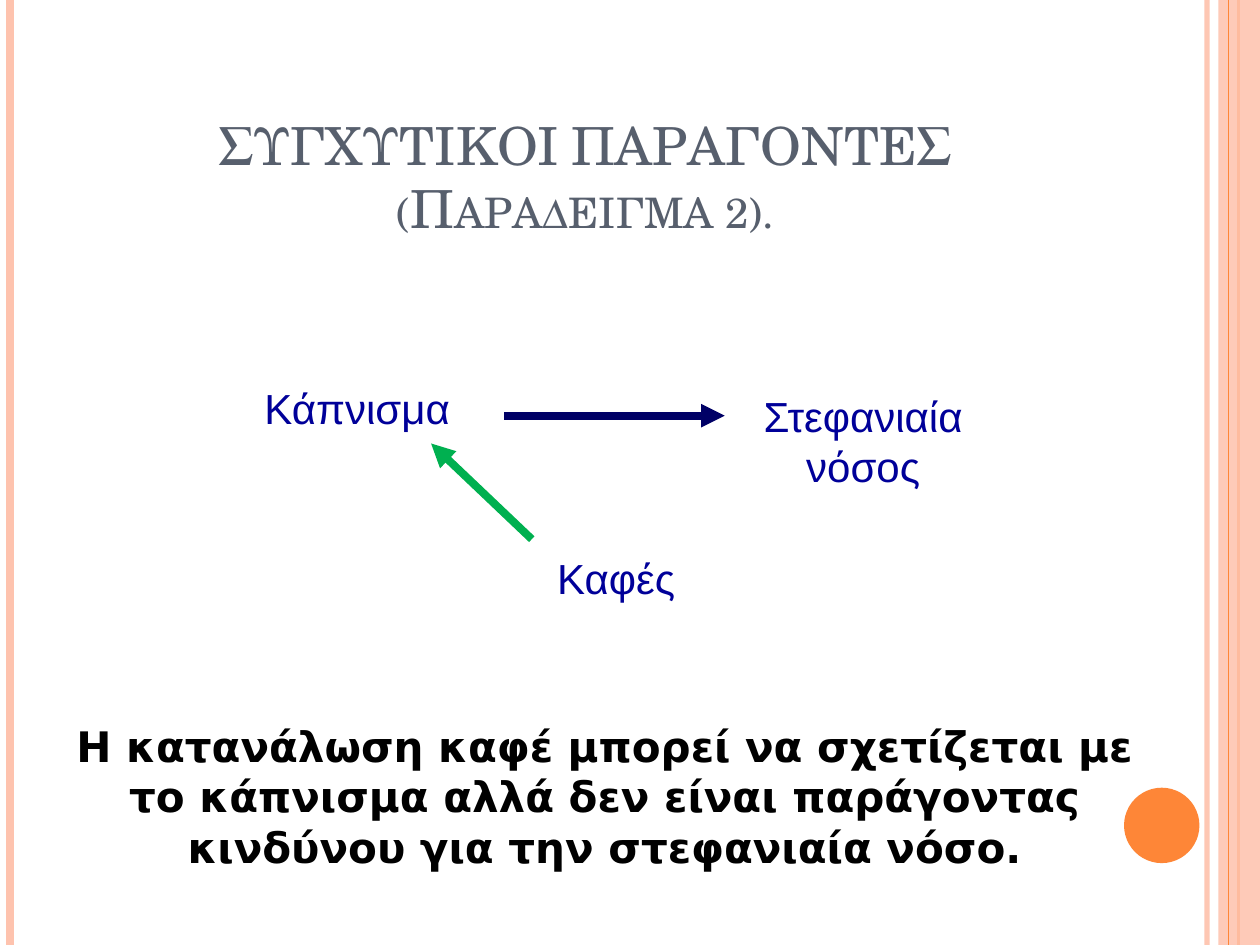
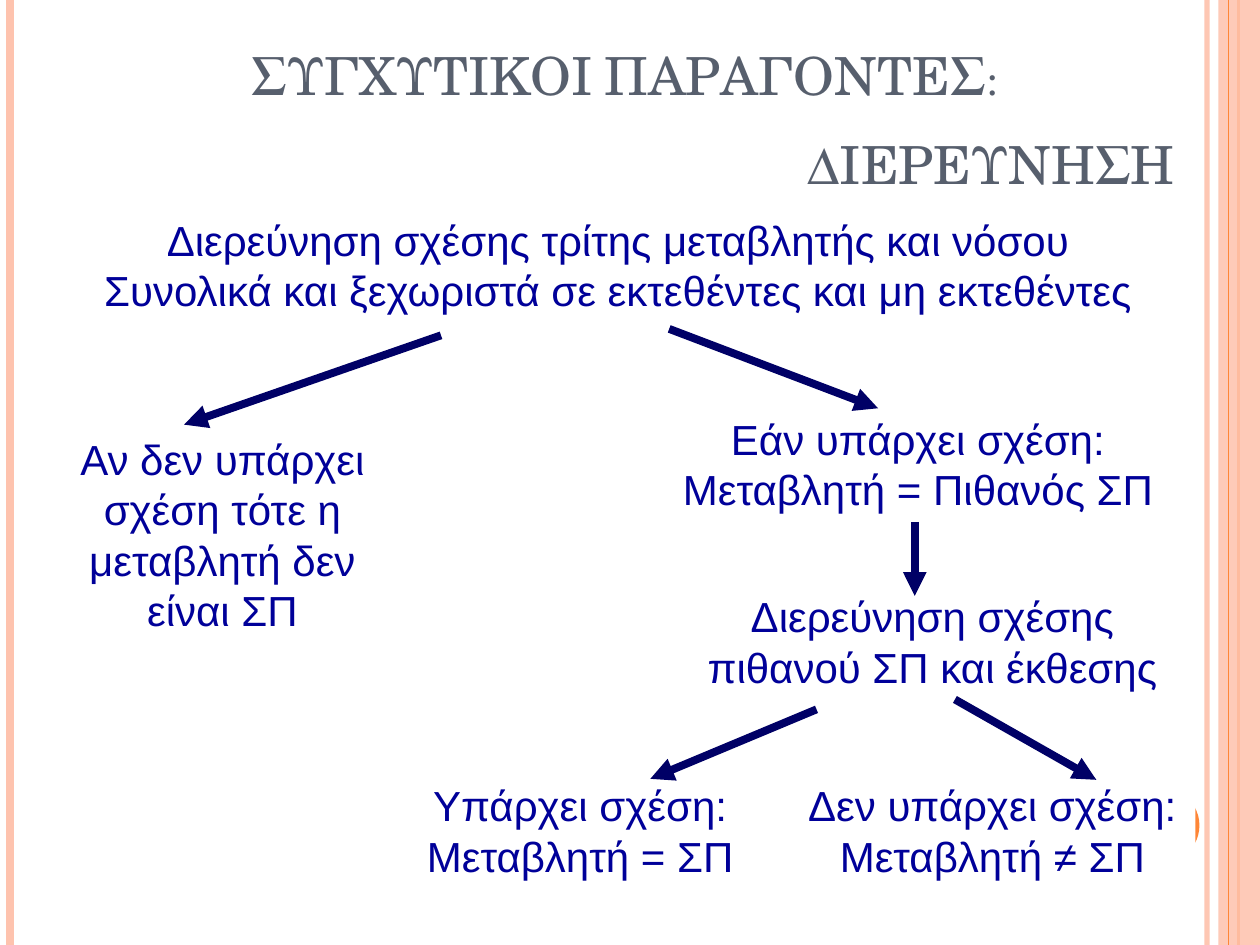
from typing import NamedTuple

from lxml.etree import SubElement
from pptx import Presentation
from pptx.dml.color import RGBColor
from pptx.enum.shapes import MSO_CONNECTOR, MSO_SHAPE
from pptx.enum.text import MSO_ANCHOR, MSO_AUTO_SIZE, PP_ALIGN
from pptx.oxml.ns import qn
from pptx.shapes.autoshape import Shape
from pptx.shapes.connector import Connector
from pptx.slide import Slide, SlideLayout
from pptx.text.text import TextFrame
from pptx.util import Cm, Pt

COLOURS = {
    "white": "FFFFFF",
    "black": "000000",
    "peach": "FEC3AE",
    "orange": "FE8637",
    "title": "575F6D",
    "label": "000099",
    "arrow": "000066",
    "green": "00B050",
}
SLIDE_WIDTH, SLIDE_HEIGHT = 25.4, 19.05
TITLE_ONLY = 5


class Box(NamedTuple):
    """Position and size in centimetres."""
    left: float
    top: float
    width: float
    height: float


class TextStyle(NamedTuple):
    font: str
    size: int
    colour: str
    bold: bool = False


class Label(NamedTuple):
    box: Box
    lines: list[str]


class Arrow(NamedTuple):
    start: tuple[float, float]
    end: tuple[float, float]
    colour: str = "arrow"


class Stripe(NamedTuple):
    x: float
    colour: str
    width: float
    opacity: int = 100


TITLE_STYLE = TextStyle("TeX Gyre Schola", 30, "title")
LABEL_STYLE = TextStyle("Arial", 24, "label")
STATEMENT_STYLE = TextStyle("DejaVu Sans", 24, "black", bold=True)

BACK_STRIPES = [
    Stripe(24.33, "peach", 3, 93),
    Stripe(0.2, "peach", 4.5),
    Stripe(24.97, "orange", 1.5),
]
FRONT_STRIPE = Stripe(24.77, "orange", 0.75)
BAND = Box(24.56, 0, 0.84, SLIDE_HEIGHT)
DISC = Box(22.66, 15.88, 1.52, 1.52)

EXAMPLE_LABELS = [
    Label(Box(11.1, 11.13, 2.64, 1.02), ["Καφές"]),
    Label(Box(15.29, 7.87, 4.22, 2.06), ["Στεφανιαία νόσος"]),
    Label(Box(4.7, 7.72, 5, 1.02), ["Κάπνισμα"]),
]
EXAMPLE_ARROWS = [
    Arrow((10.16, 8.38), (14.61, 8.38)),
    Arrow((10.72, 10.87), (8.69, 8.94), "green"),
]
STATEMENT = Label(Box(1.09, 14.4, 22.2, 3.33), [
    "Η κατανάλωση καφέ μπορεί να σχετίζεται με το κάπνισμα αλλά δεν είναι "
    "παράγοντας κινδύνου για την στεφανιαία νόσο."])

INVESTIGATION_PANEL = Box(0.71, 4.11, 23.39, 14.61)
INVESTIGATION_LABELS = [
    Label(Box(0.71, 4.32, 23.5, 2.06), [
        "Διερεύνηση σχέσης τρίτης μεταβλητής και νόσου",
        "Συνολικά και ξεχωριστά σε εκτεθέντες και μη εκτεθέντες"]),
    Label(Box(13.31, 8.33, 10.39, 2.06), ["Εάν υπάρχει σχέση: Μεταβλητή = Πιθανός ΣΠ"]),
    Label(Box(0.89, 8.74, 7.19, 5.13), ["Αν δεν υπάρχει σχέση τότε η μεταβλητή δεν είναι ΣΠ"]),
    Label(Box(13.69, 11.91, 10.21, 2.06), ["Διερεύνηση σχέσης πιθανού ΣΠ και έκθεσης"]),
    Label(Box(7.49, 15.72, 8.41, 2.06), ["Υπάρχει σχέση: Μεταβλητή = ΣΠ"]),
    Label(Box(15.7, 15.72, 8.61, 2.06), ["Δεν υπάρχει σχέση: Μεταβλητή ≠ ΣΠ"]),
]
INVESTIGATION_ARROWS = [
    Arrow((8.89, 6.76), (3.71, 8.56)),
    Arrow((13.49, 6.63), (17.7, 8.23)),
    Arrow((18.44, 10.52), (18.44, 12.01)),
    Arrow((16.46, 14.3), (13.11, 15.7)),
    Arrow((19.25, 14.1), (22.1, 15.72)),
]


def colour(name: str) -> RGBColor:
    return RGBColor.from_string(COLOURS[name])


def lengths(box: Box) -> list[Cm]:
    return [Cm(value) for value in box]


def set_opacity(shape: Shape | Connector, percent: int) -> None:
    if percent < 100:
        fill_colour = next(shape.element.spPr.iter(qn("a:srgbClr")))
        SubElement(fill_colour, qn("a:alpha"), val=str(percent * 1000))


def add_line(slide: Slide, start: tuple[float, float], end: tuple[float, float],
             colour_name: str, width: float) -> Connector:
    line = slide.shapes.add_connector(
        MSO_CONNECTOR.STRAIGHT, *(Cm(value) for value in (*start, *end)))
    line.line.color.rgb = colour(colour_name)
    line.line.width = Pt(width)
    SubElement(line.element.spPr, qn("a:effectLst"))
    return line


def add_arrow(slide: Slide, arrow: Arrow) -> None:
    line = add_line(slide, arrow.start, arrow.end, arrow.colour, 4.5)
    SubElement(line.line._get_or_add_ln(), qn("a:tailEnd"), type="triangle")


def add_stripe(slide: Slide, stripe: Stripe) -> Connector:
    line = add_line(slide, (stripe.x, 0), (stripe.x, SLIDE_HEIGHT), stripe.colour, stripe.width)
    set_opacity(line, stripe.opacity)
    return line


def add_filled(slide: Slide, kind: MSO_SHAPE, box: Box, colour_name: str,
               opacity: int = 100) -> Shape:
    shape = slide.shapes.add_shape(kind, *lengths(box))
    shape.shadow.inherit = False
    shape.fill.solid()
    shape.fill.fore_color.rgb = colour(colour_name)
    shape.line.fill.background()
    set_opacity(shape, opacity)
    return shape


def write(frame: TextFrame, lines: list[str], style: TextStyle) -> None:
    frame.text = "\n".join(lines)
    frame.word_wrap = True
    frame.auto_size = MSO_AUTO_SIZE.NONE
    frame.vertical_anchor = MSO_ANCHOR.TOP
    for paragraph in frame.paragraphs:
        paragraph.alignment = PP_ALIGN.CENTER
        paragraph.font.name = style.font
        paragraph.font.size = Pt(style.size)
        paragraph.font.bold = style.bold
        paragraph.font.color.rgb = colour(style.colour)


def add_text(slide: Slide, label: Label, style: TextStyle) -> TextFrame:
    frame = slide.shapes.add_textbox(*lengths(label.box)).text_frame
    write(frame, label.lines, style)
    return frame


def add_label(slide: Slide, label: Label) -> None:
    frame = add_text(slide, label, LABEL_STYLE)
    frame.margin_left = frame.margin_top = frame.margin_right = frame.margin_bottom = 0


def set_title(slide: Slide, box: Box, lines: list[str]) -> TextFrame:
    title = slide.shapes.title
    title.left, title.top, title.width, title.height = lengths(box)
    write(title.text_frame, lines, TITLE_STYLE)
    for properties in title.element.iter(qn("a:defRPr")):
        properties.set("cap", "small")
    return title.text_frame


def move_frame_to_layout(slide: Slide, layout: SlideLayout) -> None:
    """Draw the side stripes, band and disc, and place them behind the layout's own shapes."""
    parts = [add_stripe(slide, stripe) for stripe in BACK_STRIPES]
    parts.append(add_filled(slide, MSO_SHAPE.RECTANGLE, BAND, "peach", 87))
    parts.append(add_stripe(slide, FRONT_STRIPE))
    parts.append(add_filled(slide, MSO_SHAPE.OVAL, DISC, "orange"))
    for index, part in enumerate(parts):
        part.element.xpath(".//p:cNvPr")[0].set("id", str(100 + index))
        layout.shapes.element.insert(2 + index, part.element)


def build_example(slide: Slide) -> None:
    set_title(slide, Box(1.9, 2.16, 19.81, 2.82), ["ΣΥΓΧΥΤΙΚΟΙ ΠΑΡΑΓΟΝΤΕΣ (Παραδειγμα 2)."])
    for label in EXAMPLE_LABELS:
        add_label(slide, label)
    add_text(slide, STATEMENT, STATEMENT_STYLE)
    for arrow in EXAMPLE_ARROWS:
        add_arrow(slide, arrow)


def build_investigation(slide: Slide) -> None:
    title = set_title(slide, Box(1.09, 0.74, 23.01, 3.45),
                      ["ΣΥΓΧΥΤΙΚΟΙ ΠΑΡΑΓΟΝΤΕΣ:", "ΔΙΕΡΕΥΝΗΣΗ"])
    subject = title.paragraphs[1]
    subject.space_before = Pt(15)
    subject._p.get_or_add_pPr().set("marL", str(Cm(7.37)))
    add_filled(slide, MSO_SHAPE.RECTANGLE, INVESTIGATION_PANEL, "white")
    for label in INVESTIGATION_LABELS:
        add_label(slide, label)
    for arrow in INVESTIGATION_ARROWS:
        add_arrow(slide, arrow)


def main() -> None:
    presentation = Presentation()
    presentation.slide_width = Cm(SLIDE_WIDTH)
    presentation.slide_height = Cm(SLIDE_HEIGHT)
    layout = presentation.slide_layouts[TITLE_ONLY]
    example = presentation.slides.add_slide(layout)
    move_frame_to_layout(example, layout)
    build_example(example)
    build_investigation(presentation.slides.add_slide(layout))
    presentation.save("out.pptx")


if __name__ == "__main__":
    main()
